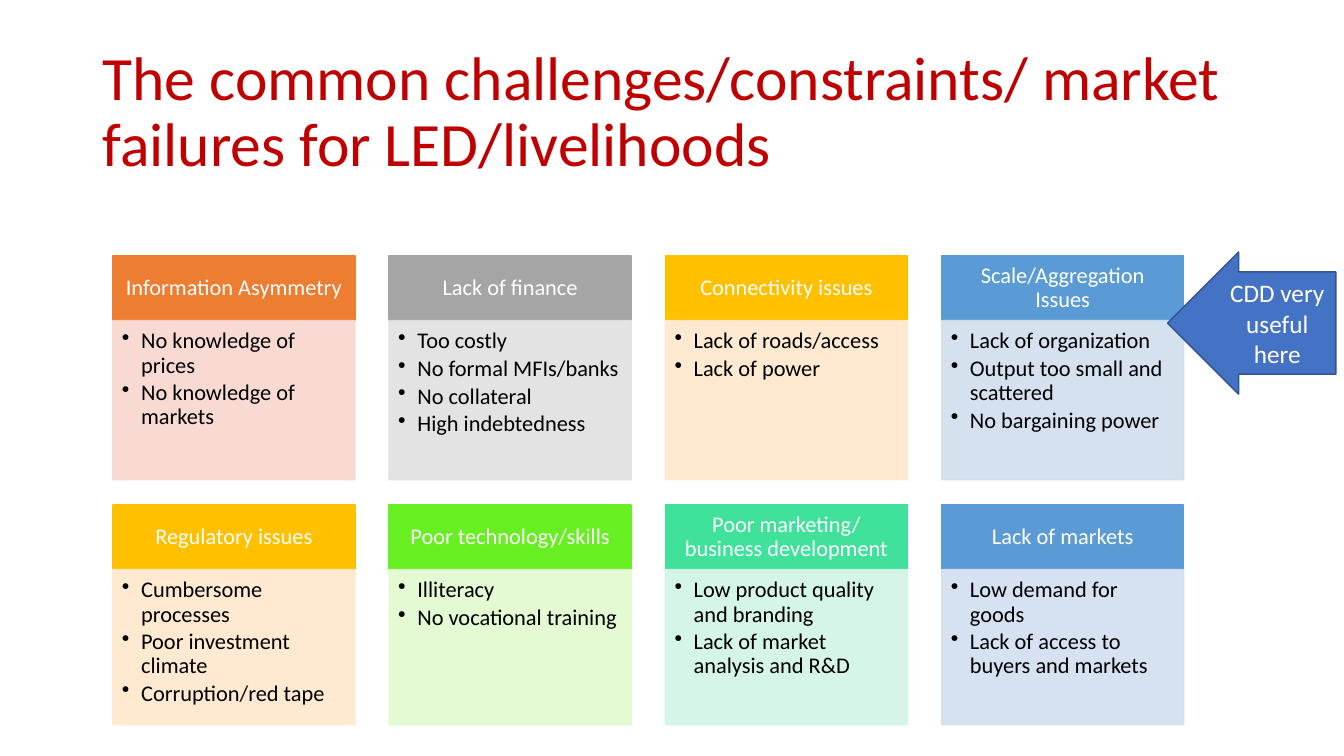
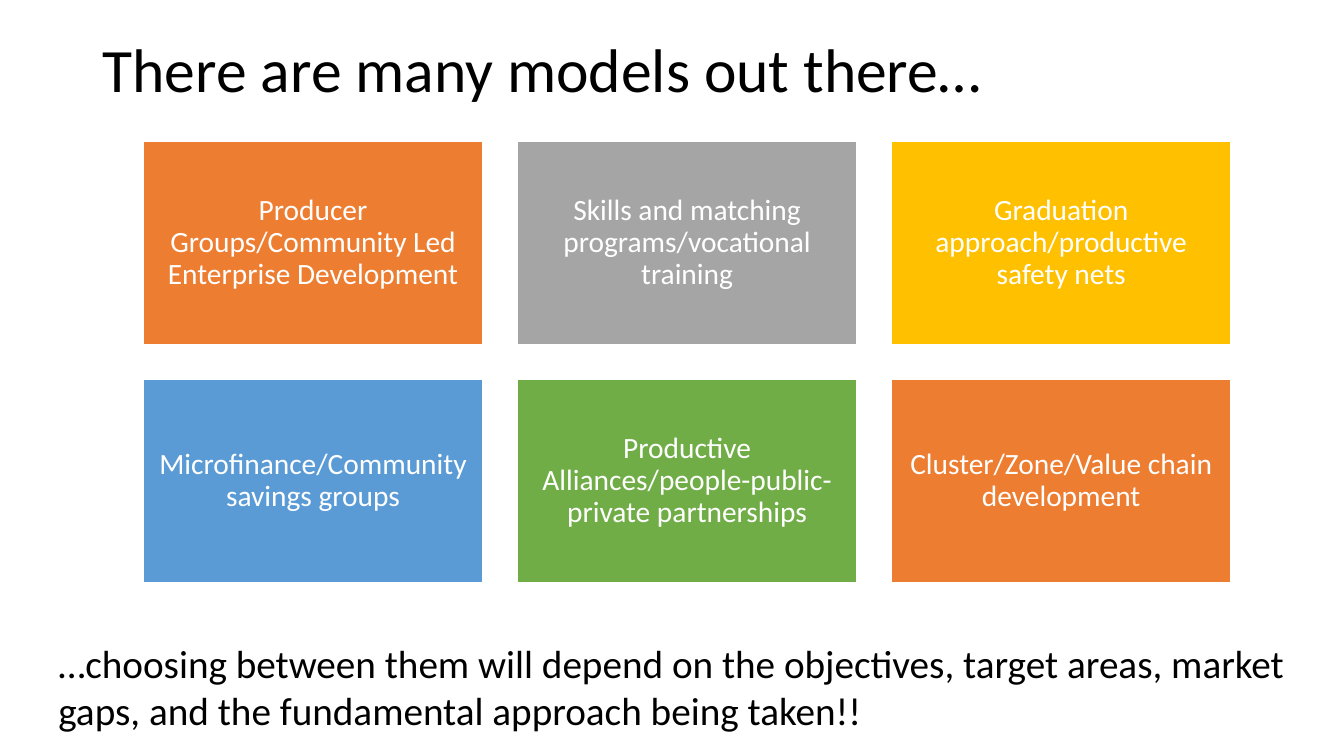
from lxml import etree
from pptx import Presentation
from pptx import util as u
from pptx.dml.color import RGBColor
from pptx.enum import shapes, text
from pptx.oxml.ns import qn

PX = 9144  # EMU; 100 px to the inch
FONT = "Calibri"
WHITE, BLACK, RED = "FFFFFF", "000000", "C00000"
ORANGE, GRAY, GOLD, BLUE = "ED7D31", "A5A5A5", "FFC000", "5B9BD5"
GREEN, LIME, MINT = "70AD47", "67EF21", "3FE19B"
ARROW_FILL, ARROW_LINE = "4472C4", "325491"

LEFT, CENTER = text.PP_ALIGN.LEFT, text.PP_ALIGN.CENTER
TOP, MIDDLE = text.MSO_ANCHOR.TOP, text.MSO_ANCHOR.MIDDLE
DEFAULT_INSETS = (10, 5, 10, 5)

# Heading, heading colour, body tint, bullet points
CHALLENGES = [
    ("Information Asymmetry", ORANGE, "F8D7CE",
     ["No knowledge of prices", "No knowledge of markets"]),
    ("Lack of finance", GRAY, "E1E1E1",
     ["Too costly", "No formal MFIs/banks", "No collateral",
      "High indebtedness"]),
    ("Connectivity issues", GOLD, "FFE8CC",
     ["Lack of roads/access", "Lack of power"]),
    ("Scale/Aggregation Issues", BLUE, "D2DEEF",
     ["Lack of organization", "Output too small and scattered",
      "No bargaining power"]),
    ("Regulatory issues", GOLD, "FFE8CC",
     ["Cumbersome processes", "Poor investment climate",
      "Corruption/red tape"]),
    ("Poor technology/skills", LIME, "E1FACE",
     ["Illiteracy", "No vocational training"]),
    ("Poor marketing/ business development", MINT, "D0F5E5",
     ["Low product quality and branding",
      "Lack of market analysis and R&D"]),
    ("Lack of markets", BLUE, "D2DFF0",
     ["Low demand for goods", "Lack of access to buyers and markets"]),
]

MODELS = [
    ("Producer Groups/Community Led Enterprise Development", ORANGE),
    ("Skills and matching programs/vocational training", GRAY),
    ("Graduation approach/productive safety nets", GOLD),
    ("Microfinance/Community savings groups", BLUE),
    ("Productive Alliances/people-public-private partnerships", GREEN),
    ("Cluster/Zone/Value chain development", ORANGE),
]


def px(*lengths):
    return [u.Emu(length * PX) for length in lengths]


def rgb(color):
    return RGBColor.from_string(color)


def set_all(target, **values):
    for name, value in values.items():
        setattr(target, name, value)


def add_bullet(paragraph, indent=19):
    properties = paragraph._p.get_or_add_pPr()
    properties.set("marL", str(indent * PX))
    properties.set("indent", str(-indent * PX))
    etree.SubElement(properties, qn("a:buChar")).set("char", "•")


def write(shape, lines, size, color, align=LEFT, anchor=TOP,
          insets=DEFAULT_INSETS, spacing=1.0, after=0, bullets=False):
    """Fill a shape with paragraphs; after is a share of the text size."""
    frame = shape.text_frame
    left, top, right, bottom = px(*insets)
    set_all(frame, word_wrap=True, vertical_anchor=anchor, margin_left=left,
            margin_top=top, margin_right=right, margin_bottom=bottom)
    for index, line in enumerate(lines):
        paragraph = frame.add_paragraph() if index else frame.paragraphs[0]
        set_all(paragraph, alignment=align, line_spacing=spacing,
                space_after=u.Pt(size * after))
        if bullets:
            add_bullet(paragraph)
        run = paragraph.add_run()
        set_all(run, text=line)
        set_all(run.font, name=FONT, size=u.Pt(size))
        run.font.color.rgb = rgb(color)


def add_text(slide, box, line, size, color, **layout):
    write(slide.shapes.add_textbox(*px(*box)), [line], size, color, **layout)


def add_title(slide, box, line, color):
    add_text(slide, box, line, 44, color, anchor=MIDDLE, spacing=0.9)


def add_filled(slide, kind, box, fill, line, opacity=100):
    shape = slide.shapes.add_shape(kind, *px(*box))
    shape.shadow.inherit = False
    shape.fill.solid()
    shape.fill.fore_color.rgb = rgb(fill)
    shape.line.color.rgb = rgb(line)
    shape.line.width = u.Pt(1)
    if opacity < 100:
        for tint in shape._element.spPr.iter(qn("a:srgbClr")):
            etree.SubElement(tint, qn("a:alpha")).set("val", str(opacity * 1000))
    return shape


def add_tile(slide, box, label, size, fill, line, insets):
    tile = add_filled(slide, shapes.MSO_SHAPE.RECTANGLE, box, fill, line)
    write(tile, [label], size, WHITE, align=CENTER, anchor=MIDDLE,
          insets=insets, spacing=0.9, after=0.35)


def add_card(slide, left, top, body_height, challenge):
    """Draw a coloured heading above a tinted list of points."""
    heading, color, tint, points = challenge
    width, head_height = 240, 64
    add_tile(slide, (left, top, width, head_height), heading, 16, color,
             color, (12, 7, 12, 7))
    body = add_filled(slide, shapes.MSO_SHAPE.RECTANGLE,
                      (left, top + head_height, width, body_height),
                      tint, tint, opacity=90)
    write(body, points, 16, BLACK, insets=(9, 9, 11, 14), spacing=0.9,
          after=0.15, bullets=True)


def add_callout(slide, box, label):
    arrow = add_filled(slide, shapes.MSO_SHAPE.LEFT_ARROW, box,
                       ARROW_FILL, ARROW_LINE)
    arrow.adjustments[0] = 0.72
    arrow.adjustments[1] = 0.5
    write(arrow, [label], 18, WHITE, align=CENTER, anchor=MIDDLE)


def build_challenges(slide):
    add_title(slide, (92, 40, 1150, 145),
              "The common challenges/constraints/ market failures for "
              "LED/livelihoods", RED)
    rows = [(254, 158), (501, 154)]  # top, body height
    for index, challenge in enumerate(CHALLENGES):
        row, column = divmod(index, 4)
        add_card(slide, 112 + 274 * column, *rows[row], challenge)
    add_callout(slide, (1158, 250, 167, 141), "CDD very useful here")


def build_models(slide):
    add_title(slide, (92, 20, 1150, 104), "There are many models out there…",
              BLACK)
    width, height, gap = 337, 202, 34
    for index, (model, color) in enumerate(MODELS):
        row, column = divmod(index, 3)
        box = (142 + column * (width + gap), 140 + row * (height + gap),
               width, height)
        add_tile(slide, box, model, 21, color, WHITE, (9, 9, 9, 9))
    add_text(slide, (48, 629, 1268, 104),
             "…choosing between them will depend on the objectives, target "
             "areas, market gaps, and the fundamental approach being taken!!",
             28, BLACK)


def main():
    deck = Presentation()
    deck.slide_width, deck.slide_height = px(1333, 750)
    blank = deck.slide_layouts[6]
    for build in (build_challenges, build_models):
        build(deck.slides.add_slide(blank))
    deck.save("out.pptx")


if __name__ == "__main__":
    main()
